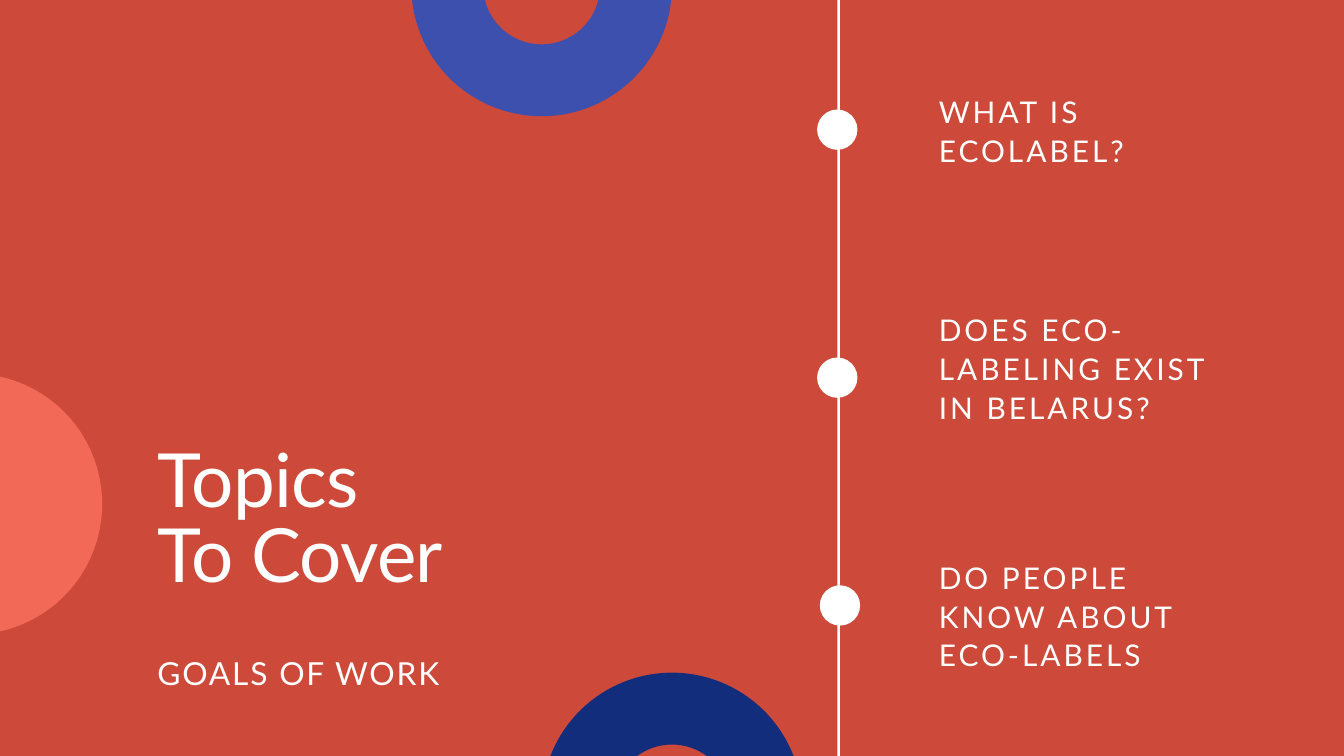
import pptx
import pptx.util
import pptx.dml.color
import pptx.enum.shapes
import pptx.enum.text

Inches = pptx.util.Inches
Pt = pptx.util.Pt
RGBColor = pptx.dml.color.RGBColor
MSO_SHAPE = pptx.enum.shapes.MSO_SHAPE

RED = RGBColor(0xCD, 0x49, 0x39)
CORAL = RGBColor(0xF3, 0x69, 0x58)
BLUE = RGBColor(0x3E, 0x50, 0xAD)
NAVY = RGBColor(0x13, 0x2D, 0x7D)
WHITE = RGBColor(0xFF, 0xFF, 0xFF)


def write(holder, lines, box, size, leading, tracking):
    holder.left, holder.top, holder.width, holder.height = map(Inches, box)
    frame = holder.text_frame
    frame.margin_left = frame.margin_top = frame.margin_right = frame.margin_bottom = 0
    frame.word_wrap = True
    frame.auto_size = pptx.enum.text.MSO_AUTO_SIZE.NONE
    frame.vertical_anchor = pptx.enum.text.MSO_ANCHOR.TOP
    frame.text = "\n".join(lines)
    for paragraph in frame.paragraphs:
        paragraph.alignment = pptx.enum.text.PP_ALIGN.LEFT
        paragraph.line_spacing = Pt(leading)
        paragraph.space_before = Pt(0)
        paragraph.font.name = "Lato"
        paragraph.font.size = Pt(size)
        paragraph.font.color.rgb = WHITE
        for run in paragraph.runs:
            run._r.get_or_add_rPr().set("spc", str(round(tracking * 100)))


def draw(preset, box, color):
    shape = slide.shapes.add_shape(preset, *map(Inches, box))
    shape.shadow.inherit = False
    shape.fill.solid()
    shape.fill.fore_color.rgb = color
    shape.line.fill.background()
    return shape


deck = pptx.Presentation()
deck.slide_width = Inches(20)
deck.slide_height = Inches(11.25)
slide = deck.slides.add_slide(deck.slide_layouts[0])
slide.background.fill.solid()
slide.background.fill.fore_color.rgb = RED

write(slide.shapes.title, ["Topics", "To Cover"], (2.34, 6.67, 8.24, 2.22), 80, 80, -0.8)
write(slide.placeholders[1], ["GOALS OF WORK"], (2.34, 9.68, 8.24, 0.58), 34, 44.2, 2)

draw(MSO_SHAPE.RECTANGLE, (12.46, -0.21, 0.04, 12.17), WHITE)

topics = [
    ("WHAT IS ECOLABEL?", 1.35, 1.13, 12.16, 1.63),
    ("DOES ECO-LABELING EXIST IN BELARUS?", 4.6, 1.71, 12.16, 5.32),
    ("DO PEOPLE KNOW ABOUT ECO-LABELS", 8.28, 1.71, 12.2, 8.71),
]
for topic, top, height, dot_left, dot_top in topics:
    draw(MSO_SHAPE.OVAL, (dot_left, dot_top, 0.6, 0.6), WHITE)
    topic_box = slide.shapes.add_textbox(0, 0, 0, 0)
    write(topic_box, [topic], (13.97, top, 4.48, height), 32, 41.6, 3.2)

draw(MSO_SHAPE.OVAL, (-2.35, 5.56, 3.87, 3.88), CORAL)
for left, top, color in [(6.12, -2.15, BLUE), (8.06, 10.01, NAVY)]:
    ring = draw(MSO_SHAPE.DONUT, (left, top, 3.88, 3.88), color)
    ring.adjustments[0] = 1.07 / 3.88

deck.save("out.pptx")
